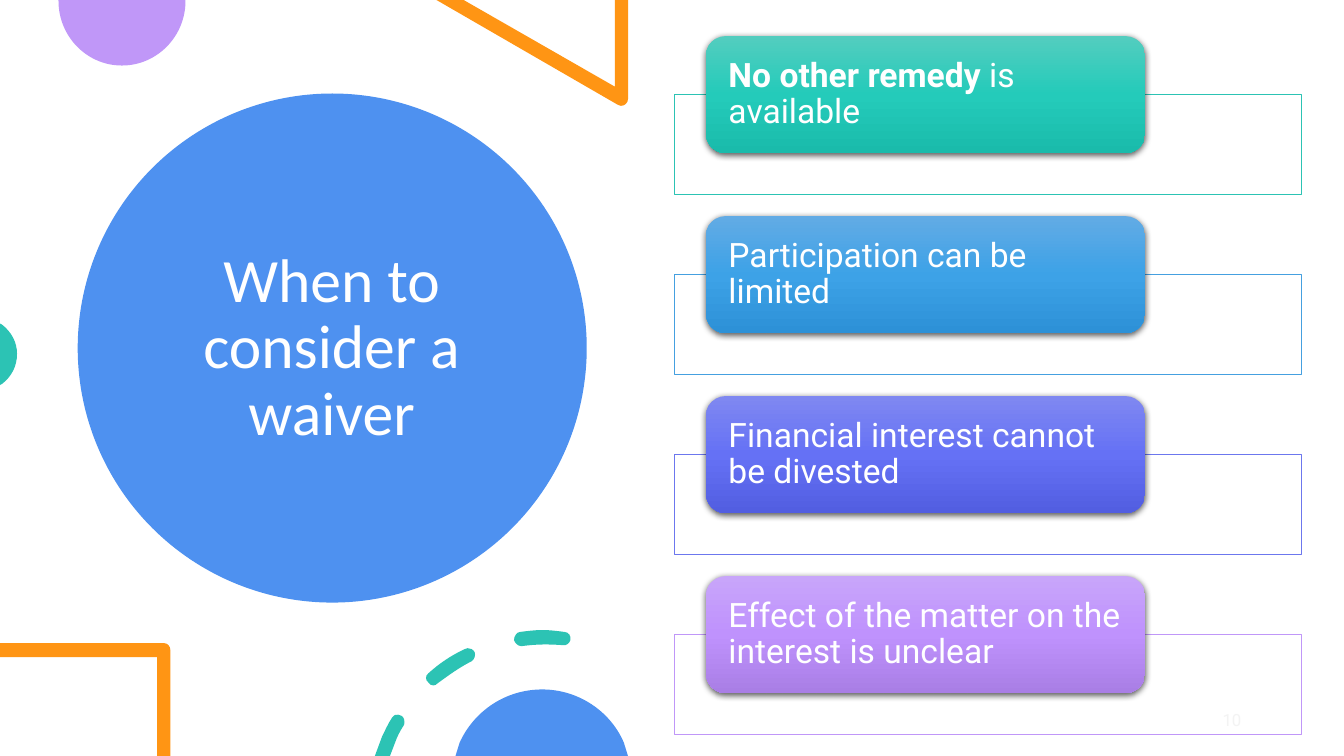
from copy import deepcopy
from dataclasses import dataclass

from lxml import etree
from pptx import Presentation
from pptx import util as u
from pptx.dml.color import RGBColor
from pptx.enum import shapes, text
from pptx.oxml import ns


@dataclass(frozen=True)
class Theme:
    white: str = "FFFFFF"
    blue: str = "4E91F0"
    purple: str = "C097F8"
    orange: str = "FF9514"
    teal: str = "2CC3B4"
    number: str = "898989"
    title_font: str = "Calibri"
    body_font: str = "Roboto"
    title_size: float = 44
    body_size: float = 24
    number_size: float = 12


THEME = Theme()
UNITS = 100  # outline units per point

# Outlines in points: pairs are corners, sixes are Bézier curves
DECORATIONS = [
    (THEME.purple, [[(132.5, 0), (41.8, 0), (41.8, 0.7), (41.8, 25.9, 61.9, 46.8, 87.1, 46.8),
                     (112.3, 46.8, 132.5, 25.9, 132.5, 0.7)]]),
    (THEME.orange, [[(448.6, 0), (439.2, 0), (439.2, 61.9), (331.2, 0), (311.8, 0), (441.4, 74.9),
                     (442.1, 75.6, 442.8, 75.6, 443.5, 75.6),
                     (446.4, 75.6, 448.6, 73.4, 448.6, 70.6)]]),
    (THEME.teal, [[(0, 231.1), (0, 275), (1.4, 274.3), (7.9, 269.3, 12.2, 262.1, 12.2, 252.7),
                   (12.2, 244.1, 7.9, 236.9, 1.4, 231.8)]]),
    (THEME.orange, [[(117.4, 459.4), (0, 459.4), (0, 469.4), (112.3, 469.4), (112.3, 540),
                     (121.7, 540), (121.7, 464.4), (121.7, 461.5, 119.5, 459.4, 117.4, 459.4)]]),
    (THEME.teal, [
        [(284.4, 510.5), (283, 509.8, 280.8, 511.2, 280.1, 512.6),
         (277.2, 517, 275, 522, 272.9, 526.3), (267.8, 540), (278.6, 540), (282.2, 530.6),
         (283.7, 526.3, 285.8, 522, 288.7, 517.7), (289.4, 515.5, 288.7, 511.9, 286.6, 511.2),
         (285.8, 510.5, 285.1, 510.5, 284.4, 510.5)],
        [(334.1, 463), (333.4, 463, 332.6, 463, 331.9, 463.7),
         (322.6, 468, 313.9, 473.8, 306, 481), (303.8, 482.4, 303.8, 486, 306, 487.4),
         (306.7, 488.9, 308.2, 489.6, 309.6, 489.6), (311, 489.6, 311.8, 488.9, 312.5, 488.2),
         (320.4, 482.4, 328.3, 476.6, 337, 472.3), (339.1, 470.9, 339.8, 468, 339.1, 465.8),
         (337.7, 463.7, 336.2, 463, 334.1, 463)],
        [(387.4, 450), (382.3, 450, 377.3, 450.7, 371.5, 451.4),
         (369.4, 451.4, 367.2, 454.3, 367.2, 457.2), (367.9, 459.4, 370.1, 461.5, 372.2, 461.5),
         (373, 461.5), (383, 460.1, 392.4, 460.1, 401.8, 460.8),
         (404.6, 461.5, 406.8, 459.4, 407.5, 457.2), (408.2, 454.3, 406.1, 451.4, 403.2, 451.4),
         (398.2, 450.7, 392.4, 450, 387.4, 450)]]),
    (THEME.blue, [[(387.4, 492.5), (360.7, 492.5, 338.4, 508.3, 328.3, 530.6), (325.4, 540),
                   (448.6, 540), (445.7, 530.6), (436.3, 508.3, 413.3, 492.5, 387.4, 492.5)]]),
]

# Runs (text, bold), frame colour, gradient colours
CARDS = [
    ([("No other remedy ", True), ("is available", False)],
     "2CC3B4", ("53CDBF", "24CBBA", "1ABBAB")),
    ([("Participation can be limited", False)],
     "45A0E0", ("62ABE5", "3DA2E7", "2D91D7")),
    ([("Financial interest cannot be divested", False)],
     "6C77EE", ("7F88F1", "6571F5", "525EE1")),
    ([("Effect of the matter on the interest is unclear", False)],
     "C097F8", ("C8A5FA", "BF92FD", "A97EE5")),
]


def rgb(color):
    return RGBColor.from_string(color)


def paint(shape, color):
    shape.shadow.inherit = False
    shape.fill.solid()
    shape.fill.fore_color.rgb = rgb(color)
    shape.line.fill.background()


def place(slide, kind, box):
    return slide.shapes.add_shape(kind, *(u.Pt(length) for length in box))


def write(shape, runs, font, size, color, align, inset=0):
    frame = shape.text_frame
    frame.word_wrap = True
    frame.auto_size = text.MSO_AUTO_SIZE.NONE
    frame.vertical_anchor = text.MSO_ANCHOR.MIDDLE
    frame.margin_left = frame.margin_right = u.Pt(inset)
    frame.margin_top = frame.margin_bottom = 0
    paragraph = frame.paragraphs[0]
    paragraph.alignment = align
    paragraph.line_spacing = 0.9
    for words, bold in runs:
        run = paragraph.add_run()
        run.text = words
        run.font.name, run.font.size, run.font.bold = font, u.Pt(size), bold
        run.font.color.rgb = rgb(color)


def bend(segment, part, left, top):
    """Turn a straight segment into a Bézier curve."""
    curve = etree.Element(ns.qn("a:cubicBezTo"))
    for x, y in zip(part[::2], part[1::2]):
        etree.SubElement(curve, ns.qn("a:pt"), x=str(round(x * UNITS - left)),
                         y=str(round(y * UNITS - top)))
    segment.getparent().replace(segment, curve)


def add_decoration(slide, color, contours):
    builder = None
    for contour in contours:
        ends = [(part[-2] * UNITS, part[-1] * UNITS) for part in contour]
        if builder is None:
            builder = slide.shapes.build_freeform(*ends[0], scale=u.Pt(1) / UNITS)
        else:
            builder.move_to(*ends[0])
        builder.add_line_segments(ends[1:], close=True)
    shape = builder.convert_to_shape()
    left, top = (edge / u.Pt(1) * UNITS for edge in (shape.left, shape.top))
    segments = [segment for segment in shape.element.iter(ns.qn("a:moveTo"), ns.qn("a:lnTo"))]
    parts = [part for contour in contours for part in contour]
    for segment, part in zip(segments, parts):
        if len(part) == 6:
            bend(segment, part, left, top)
    paint(shape, color)


def add_title_circle(slide, left, top, size):
    paint(place(slide, shapes.MSO_SHAPE.OVAL, (left, top, size, size)), THEME.blue)
    title = slide.shapes.title
    title.left, title.top = u.Pt(left + 54), u.Pt(top + 22.3)
    title.width, title.height = u.Pt(254.9), u.Pt(320.4)
    write(title, [("When to consider a waiver", False)], THEME.title_font, THEME.title_size,
          THEME.white, text.PP_ALIGN.CENTER, inset=7.2)
    title.element.getparent().append(title.element)  # bring in front of the circle


def add_slide_number(slide, left, top, width, height):
    box = slide.shapes.add_textbox(*(u.Pt(n) for n in (left, top, width, height)))
    write(box, [("10", False)], THEME.body_font, THEME.number_size, THEME.number,
          text.PP_ALIGN.CENTER)
    # Make it a slide number placeholder with a live field
    holder = box.element.find(".//" + ns.qn("p:nvPr"))
    etree.SubElement(holder, ns.qn("p:ph"), type="sldNum", sz="quarter", idx="12")
    del box.element.find(".//" + ns.qn("p:cNvSpPr")).attrib["txBox"]
    field = box.element.find(".//" + ns.qn("a:r"))
    field.tag = ns.qn("a:fld")
    field.set("id", "{B6F15528-21DE-4FAA-801E-634DDDAF4B2B}")
    field.set("type", "slidenum")


def add_card(slide, left, top, width, runs, frame_color, gradient):
    # Outlined frame, 90% opaque
    frame = place(slide, shapes.MSO_SHAPE.RECTANGLE, (left, top + 41.7, width, 71.4))
    paint(frame, THEME.white)
    solid_color = frame.element.spPr.find(ns.qn("a:solidFill"))[0]
    etree.SubElement(solid_color, ns.qn("a:alpha"), val="90000")
    frame.line.color.rgb = rgb(frame_color)
    frame.line.width = u.Pt(0.5)

    # Rounded label with a three-stop gradient
    label = place(slide, shapes.MSO_SHAPE.ROUNDED_RECTANGLE,
                  (left + 22.4, top, width * 0.7, 83.6))
    label.line.fill.background()
    label.fill.gradient()
    label.fill.gradient_angle = 270
    stop_list = label.element.spPr.find(".//" + ns.qn("a:gsLst"))
    stop_list.insert(1, deepcopy(stop_list[0]))
    for stop, position, color in zip(label.fill.gradient_stops, (0, 0.5, 1), gradient):
        stop.position = position
        stop.color.rgb = rgb(color)

    # Soft shadow below the label
    label.shadow.inherit = False
    effects = label.element.spPr.find(ns.qn("a:effectLst"))
    shadow = etree.SubElement(effects, ns.qn("a:outerShdw"), blurRad=str(u.Pt(4.5)),
                              dist=str(u.Pt(1.5)), dir="5400000", algn="ctr", rotWithShape="0")
    shadow_color = etree.SubElement(shadow, ns.qn("a:srgbClr"), val="000000")
    etree.SubElement(shadow_color, ns.qn("a:alpha"), val="63000")
    write(label, runs, THEME.body_font, THEME.body_size, THEME.white,
          text.PP_ALIGN.LEFT, inset=12)


def add_cards(slide, left, top, width, pitch):
    for index, card in enumerate(CARDS):
        add_card(slide, left, top + index * pitch, width, *card)


def main():
    presentation = Presentation()
    presentation.slide_width, presentation.slide_height = u.Pt(960), u.Pt(540)
    presentation.element.set("firstSlideNum", "10")
    slide = presentation.slides.add_slide(presentation.slide_layouts[5])
    for color, contours in DECORATIONS:
        add_decoration(slide, color, contours)
    add_title_circle(slide, 55.5, 66.8, 363.6)
    add_slide_number(slide, 860, 505, 40, 20)
    add_cards(slide, 481.9, 25.8, 448, 128.57)
    presentation.save("out.pptx")


if __name__ == "__main__":
    main()
